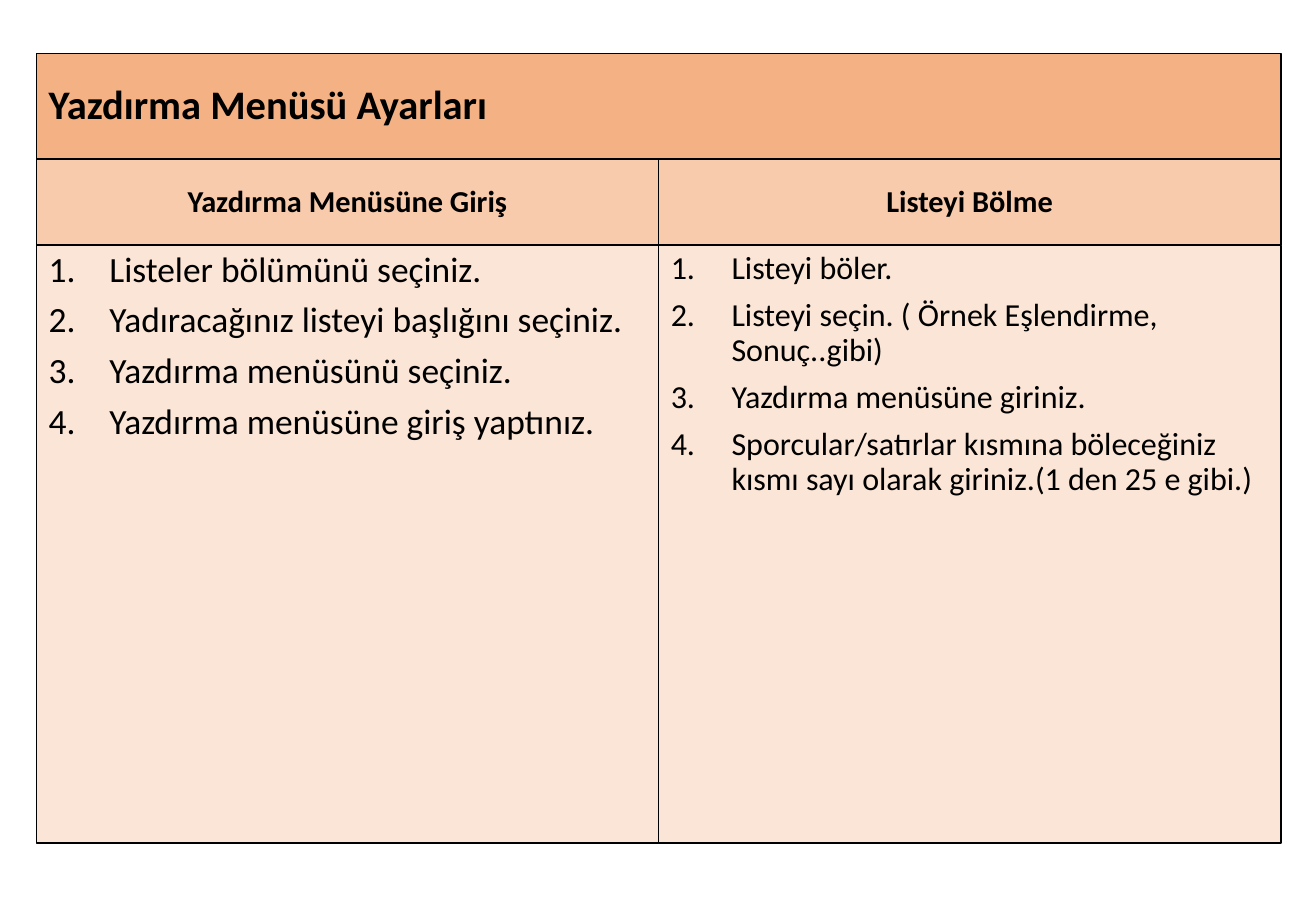
"""Build a slide on print menu settings with two numbered lists."""
from lxml.etree import SubElement
from pptx import Presentation
from pptx.dml.color import RGBColor
from pptx.enum.text import MSO_ANCHOR, MSO_AUTO_SIZE, PP_ALIGN
from pptx.oxml.ns import qn
from pptx.util import Inches, Pt

COLORS = {"title": "F4B183", "header": "F8CBAD", "list": "FBE5D6", "ink": "000000"}
LEFT, COL_W = 0.3, 5.12
ROW_TOPS = [0.44, 1.31, 2.02, 6.94]
COLUMNS = [
    ("Yazdırma Menüsüne Giriş", 21, [
        "Listeler bölümünü seçiniz.",
        "Yadıracağınız listeyi başlığını seçiniz.",
        "Yazdırma menüsünü seçiniz.",
        "Yazdırma menüsüne giriş yaptınız.",
    ]),
    ("Listeyi Bölme", 19, [
        "Listeyi böler.",
        "Listeyi seçin. ( Örnek Eşlendirme, Sonuç..gibi)",
        "Yazdırma menüsüne giriniz.",
        "Sporcular/satırlar kısmına böleceğiniz kısmı sayı olarak giriniz.(1 den 25 e gibi.)",
    ]),
]


def fill_cell(sp, row, col, span, color, lines, size, bold, align, before):
    """Place a placeholder on the grid and format its text."""
    sp.left, sp.top = Inches(LEFT + col * COL_W), Inches(ROW_TOPS[row])
    sp.width = Inches(span * COL_W)
    sp.height = Inches(ROW_TOPS[row + 1] - ROW_TOPS[row])
    sp.fill.solid()
    sp.fill.fore_color.rgb = RGBColor.from_string(COLORS[color])
    sp.line.color.rgb = RGBColor.from_string(COLORS["ink"])
    sp.line.width = Pt(1)
    tf = sp.text_frame
    tf.text = "\n".join(lines)
    tf.word_wrap = True
    tf.auto_size = MSO_AUTO_SIZE.NONE
    tf.vertical_anchor = MSO_ANCHOR.TOP if color == "list" else MSO_ANCHOR.MIDDLE
    for p in tf.paragraphs:
        p.alignment = align
        p.line_spacing = 0.9
        p.space_before = Pt(before)
        for r in p.runs:
            r.font.name = "Calibri"
            r.font.size = Pt(size)
            r.font.bold = bold
            r.font.color.rgb = RGBColor.from_string(COLORS["ink"])


def number_list(sp):
    """Number the paragraphs with a hanging indent."""
    for p in sp.text_frame.paragraphs:
        pPr = p._p.get_or_add_pPr()
        pPr.set("marL", str(Inches(0.5)))
        pPr.set("indent", str(-Inches(0.5)))
        SubElement(pPr, qn("a:buFont"), typeface="+mj-lt")
        SubElement(pPr, qn("a:buAutoNum"), type="arabicPeriod")


prs = Presentation()
prs.slide_width, prs.slide_height = Inches(10.83), Inches(7.5)
s = prs.slides.add_slide(prs.slide_layouts.get_by_name("Comparison"))

fill_cell(s.shapes.title, 0, 0, 2, "title", ["Yazdırma Menüsü Ayarları"],
          24, True, PP_ALIGN.LEFT, 0)

for col, (header, size, steps) in enumerate(COLUMNS):
    header_sp = s.placeholders[2 * col + 1]
    list_sp = s.placeholders[2 * col + 2]
    fill_cell(header_sp, 1, col, 1, "header", [header], 18, True, PP_ALIGN.CENTER, 7.5)
    fill_cell(list_sp, 2, col, 1, "list", steps, size, False, PP_ALIGN.LEFT, 7.5)
    number_list(list_sp)

prs.save("out.pptx")
